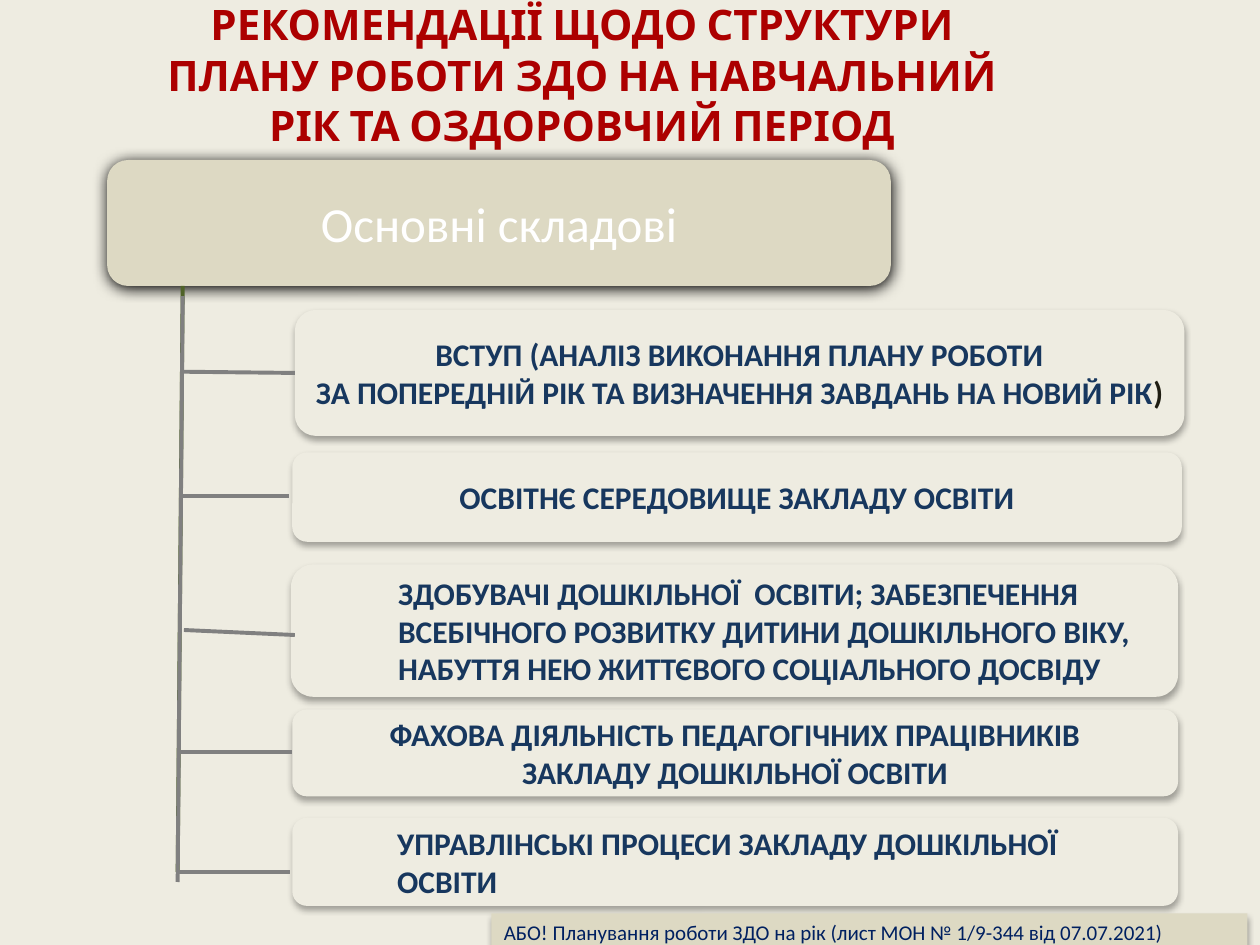
from dataclasses import dataclass

from lxml import etree
from pptx import Presentation
from pptx.dml.color import RGBColor
from pptx.enum.shapes import MSO_CONNECTOR, MSO_SHAPE
from pptx.enum.text import MSO_ANCHOR, MSO_AUTO_SIZE, PP_ALIGN
from pptx.oxml.ns import qn
from pptx.util import Inches, Pt

ROUNDED, RECTANGLE = MSO_SHAPE.ROUNDED_RECTANGLE, MSO_SHAPE.RECTANGLE
STRAIGHT = MSO_CONNECTOR.STRAIGHT
MIDDLE, TOP = MSO_ANCHOR.MIDDLE, MSO_ANCHOR.TOP
CENTER, LEFT = PP_ALIGN.CENTER, PP_ALIGN.LEFT
FIXED_SIZE = MSO_AUTO_SIZE.NONE
TITLE_ONLY = 5
COLUMNS, ROWS = 100, 75


@dataclass(frozen=True)
class Theme:
    paper: str = "EEECE1"
    sand: str = "DDD9C3"
    white: str = "FFFFFF"
    black: str = "000000"
    red: str = "AC0000"
    navy: str = "17375E"
    ink: str = "1E1C11"
    footer: str = "002060"
    green: str = "4F6228"
    gray: str = "808080"
    title_font: str = "Cabin"
    body_font: str = "Calibri"
    header_size: float = 28
    title_size: float = 24
    item_size: float = 18
    footer_size: float = 12
    line_width: float = 2.25
    soft_shadow: tuple = (32, 3.5, 2.2)
    strong_shadow: tuple = (100, 8.5, 1)


class SlideBuilder:
    def __init__(self, deck, theme):
        self.theme = theme
        self.column = deck.slide_width / COLUMNS
        self.row = deck.slide_height / ROWS
        self.page = deck.slides.add_slide(deck.slide_layouts[TITLE_ONLY])
        fill = self.page.background.fill
        fill.solid()
        fill.fore_color.rgb = RGBColor.from_string(theme.paper)

    def place(self, left, top, width, height):
        return (round(left * self.column), round(top * self.row),
                round(width * self.column), round(height * self.row))

    def label(self, box, text, size, color, font, bold=False, align=CENTER, anchor=MIDDLE):
        frame = box.text_frame
        frame.text = text
        frame.word_wrap = True
        frame.auto_size = FIXED_SIZE
        frame.vertical_anchor = anchor
        for para in frame.paragraphs:
            para.alignment = align
            for span in para.runs:
                self.style(span, size, color, font, bold)
        return frame

    def style(self, span, size, color, font, bold):
        span.font.size = Pt(size)
        span.font.name = font
        span.font.bold = bold
        span.font.color.rgb = RGBColor.from_string(color)

    def title(self, text, *area):
        box = self.page.shapes.title
        box.left, box.top, box.width, box.height = self.place(*area)
        self.label(box, text, self.theme.title_size, self.theme.red,
                   self.theme.title_font, bold=True, anchor=TOP)

    def panel(self, kind, area, color, shadow):
        box = self.page.shapes.add_shape(kind, *self.place(*area))
        box.fill.solid()
        box.fill.fore_color.rgb = RGBColor.from_string(color)
        box.line.fill.background()
        self.cast_shadow(box, *shadow)
        return box

    def cast_shadow(self, box, opacity, blur, distance):
        box.shadow.inherit = False
        effects = box._element.spPr.find(qn("a:effectLst"))
        outer = etree.SubElement(effects, qn("a:outerShdw"), blurRad=str(Pt(blur)),
                                 dist=str(Pt(distance)), dir="5400000", rotWithShape="0")
        color = etree.SubElement(outer, qn("a:srgbClr"), val=self.theme.black)
        etree.SubElement(color, qn("a:alpha"), val=str(opacity * 1000))

    def header(self, text, *area):
        theme = self.theme
        box = self.panel(ROUNDED, area, theme.sand, theme.strong_shadow)
        self.label(box, text, theme.header_size, theme.white, theme.body_font)

    def item(self, text, area, indent=0, ending=""):
        theme = self.theme
        box = self.panel(ROUNDED, area, theme.paper, theme.soft_shadow)
        frame = self.label(box, text, theme.item_size, theme.navy, theme.body_font,
                           bold=True, align=LEFT if indent else CENTER)
        if indent:
            for para in frame.paragraphs:
                para._p.get_or_add_pPr().set("marL", str(round(indent * self.column)))
        if ending:
            span = frame.paragraphs[-1].add_run()
            span.text = ending
            self.style(span, theme.item_size, theme.ink, theme.body_font, True)

    def footer(self, text, *area):
        theme = self.theme
        box = self.panel(RECTANGLE, area, theme.sand, theme.soft_shadow)
        self.label(box, text, theme.footer_size, theme.footer, theme.body_font,
                   align=LEFT, anchor=TOP)

    def line(self, start, end, color):
        link = self.page.shapes.add_connector(STRAIGHT, *self.place(*start, *end))
        link.line.color.rgb = RGBColor.from_string(color)
        link.line.width = Pt(self.theme.line_width)
        etree.SubElement(link._element.spPr, qn("a:effectLst"))


ITEMS = [
    ("ВСТУП (АНАЛІЗ ВИКОНАННЯ ПЛАНУ РОБОТИ\n"
     "ЗА ПОПЕРЕДНІЙ РІК ТА ВИЗНАЧЕННЯ ЗАВДАНЬ НА НОВИЙ РІК",
     (23.4, 24.6, 70.6, 10), 0, ")"),
    ("ОСВІТНЄ СЕРЕДОВИЩЕ ЗАКЛАДУ ОСВІТИ", (23.2, 35.9, 70.6, 7.1), 0, ""),
    ("ЗДОБУВАЧІ ДОШКІЛЬНОЇ  ОСВІТИ; ЗАБЕЗПЕЧЕННЯ ВСЕБІЧНОГО РОЗВИТКУ ДИТИНИ "
     "ДОШКІЛЬНОГО ВІКУ, НАБУТТЯ НЕЮ ЖИТТЄВОГО СОЦІАЛЬНОГО ДОСВІДУ",
     (23.1, 44.8, 70.4, 10.5), 7, ""),
    ("ФАХОВА ДІЯЛЬНІСТЬ ПЕДАГОГІЧНИХ ПРАЦІВНИКІВ\nЗАКЛАДУ ДОШКІЛЬНОЇ ОСВІТИ",
     (23.2, 56.3, 70.3, 6.9), 0, ""),
    ("УПРАВЛІНСЬКІ ПРОЦЕСИ ЗАКЛАДУ ДОШКІЛЬНОЇ ОСВІТИ",
     (23.2, 64.9, 70.3, 7), 7, ""),
]
BRANCHES = [
    ((14.4, 29.5), (23.4, 29.6)),
    ((14.2, 39.4), (22.9, 39.4)),
    ((14.6, 50), (23.4, 50.4)),
    ((14.3, 59.7), (23.2, 59.7)),
    ((14.1, 69.2), (23, 69.2)),
]


def main():
    deck = Presentation()
    deck.slide_width, deck.slide_height = Inches(10), Inches(7.5)
    theme = Theme()
    slide = SlideBuilder(deck, theme)
    slide.title("РЕКОМЕНДАЦІЇ ЩОДО СТРУКТУРИ\n"
                "ПЛАНУ РОБОТИ ЗДО НА НАВЧАЛЬНИЙ РІК ТА ОЗДОРОВЧИЙ ПЕРІОД",
                9.8, -0.6, 72.8, 13.1)
    slide.header("Основні складові", 8.5, 12.7, 62.2, 10)
    for text, area, indent, ending in ITEMS:
        slide.item(text, area, indent, ending)
    slide.line((14.5, 22.7), (14.1, 69.2), theme.green)
    for start, end in BRANCHES:
        slide.line(start, end, theme.gray)
    slide.line((14.5, 23.5), (14.1, 70), theme.gray)
    slide.footer("АБО! Планування роботи ЗДО на рік (лист МОН № 1/9-344 від 07.07.2021)",
                 39, 72.5, 60, 3)
    deck.save("out.pptx")


if __name__ == "__main__":
    main()
